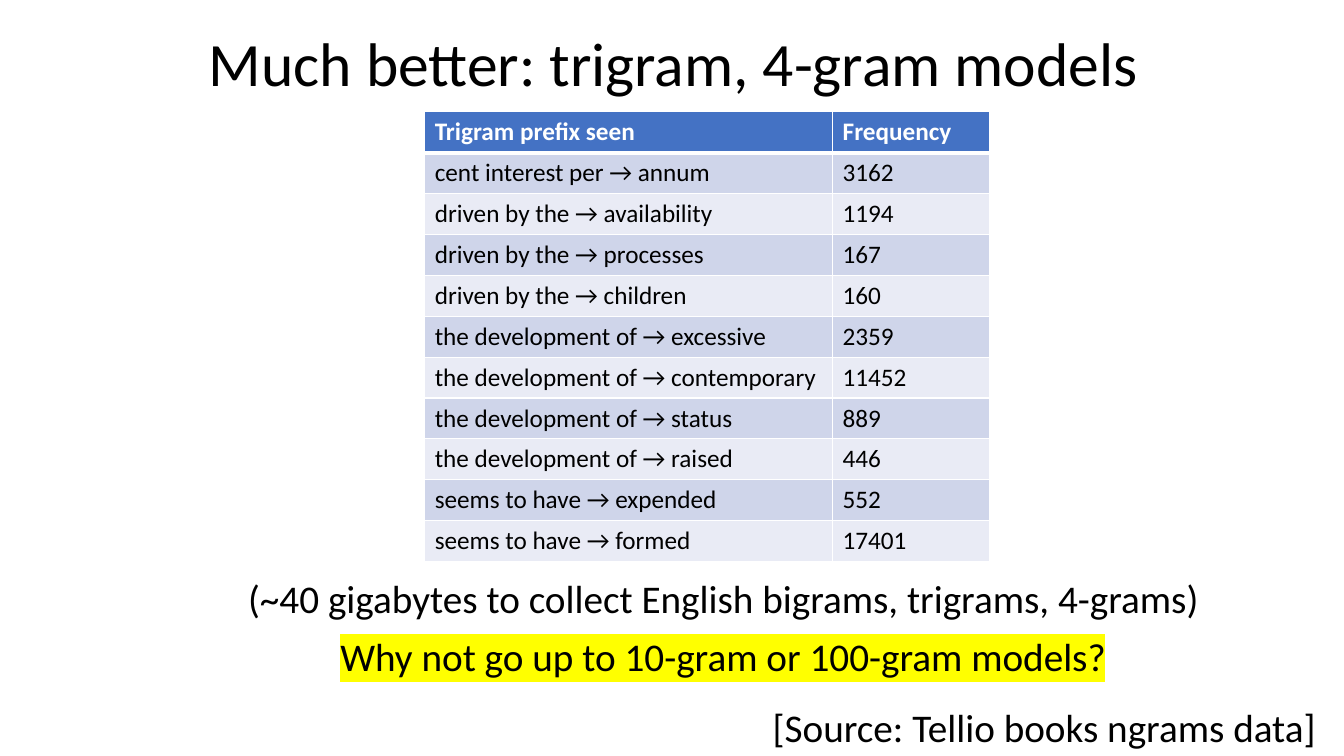
from lxml import etree
from pptx import Presentation
from pptx import util as u
from pptx.dml.color import RGBColor
from pptx.enum import text
from pptx.oxml import ns

WHITE = RGBColor(0xFF, 0xFF, 0xFF)
BLACK = RGBColor(0x00, 0x00, 0x00)
YELLOW = RGBColor(0xFF, 0xFF, 0x00)
HEADER_BLUE = RGBColor(0x44, 0x72, 0xC4)
BANDS = (RGBColor(0xCF, 0xD5, 0xEA), RGBColor(0xE9, 0xEB, 0xF5))

TRIGRAMS = [
    ("Trigram prefix seen", "Frequency"),
    ("cent interest per → annum", "3162"),
    ("driven by the → availability", "1194"),
    ("driven by the → processes", "167"),
    ("driven by the → children", "160"),
    ("the development of → excessive", "2359"),
    ("the development of → contemporary", "11452"),
    ("the development of → status", "889"),
    ("the development of → raised", "446"),
    ("seems to have → expended", "552"),
    ("seems to have → formed", "17401"),
]


class SlideBuilder:
    font_name = "Calibri"

    def __init__(self, slide):
        self.slide = slide

    def format_run(self, run, size, color=BLACK, bold=False):
        run.font.name = self.font_name
        run.font.size = u.Pt(size)
        run.font.bold = bold
        run.font.color.rgb = color

    def highlight(self, run, color):
        marker = etree.Element(ns.qn("a:highlight"))
        etree.SubElement(marker, ns.qn("a:srgbClr"), val=str(color))
        run.font._element.find(ns.qn("a:solidFill")).addnext(marker)

    def text_box(self, content, left, top, width, height, size=28,
                 wrap=False, highlight=None):
        shape = self.slide.shapes.add_textbox(
            u.Pt(left), u.Pt(top), u.Pt(width), u.Pt(height))
        frame = shape.text_frame
        frame.text = content
        frame.word_wrap = wrap
        paragraph = frame.paragraphs[0]
        paragraph.alignment = text.PP_ALIGN.CENTER
        run = paragraph.runs[0]
        self.format_run(run, size)
        if highlight is not None:
            self.highlight(run, highlight)
        return shape

    def title(self, content, left, top, width, height):
        frame = self.text_box(content, left, top, width, height,
                              size=44, wrap=True).text_frame
        frame.vertical_anchor = text.MSO_ANCHOR.MIDDLE
        frame.paragraphs[0].line_spacing = 0.9

    def cell_borders(self, cell, widths):
        """Draw white borders; widths maps each side (L, R, T, B) to points."""
        properties = cell._tc.get_or_add_tcPr()
        for index, (side, width) in enumerate(widths.items()):
            line = etree.Element(ns.qn(f"a:ln{side}"), w=str(u.Pt(width)))
            fill = etree.SubElement(line, ns.qn("a:solidFill"))
            etree.SubElement(fill, ns.qn("a:srgbClr"), val=str(WHITE))
            properties.insert(index, line)

    def table(self, rows, left, top, column_widths, row_height):
        table = self.slide.shapes.add_table(
            len(rows), len(column_widths), u.Pt(left), u.Pt(top),
            u.Pt(sum(column_widths)), u.Pt(row_height * len(rows))).table
        for column, width in zip(table.columns, column_widths):
            column.width = u.Pt(width)
        for row_index, values in enumerate(rows):
            table.rows[row_index].height = u.Pt(row_height)
            header = row_index == 0
            for column_index, value in enumerate(values):
                cell = table.cell(row_index, column_index)
                cell.text_frame.text = value
                self.format_run(cell.text_frame.paragraphs[0].runs[0], 18,
                                WHITE if header else BLACK, bold=header)
                cell.fill.solid()
                cell.fill.fore_color.rgb = (
                    HEADER_BLUE if header else BANDS[(row_index - 1) % 2])
                self.cell_borders(cell, {
                    "L": 1, "R": 1,
                    "T": 3 if row_index == 1 else 1,
                    "B": 3 if header else 1})


def main():
    presentation = Presentation()
    presentation.slide_width = u.Pt(960)
    presentation.slide_height = u.Pt(540)
    builder = SlideBuilder(
        presentation.slides.add_slide(presentation.slide_layouts[6]))

    builder.title("Much better: trigram, 4-gram models", 1.4, 1.8, 960, 91.4)
    builder.table(TRIGRAMS, 303.4, 79.9, (291.4, 112), 29.2)
    builder.text_box("[Source: Tellio books ngrams data]",
                     531.6, 499, 428.4, 41)
    builder.text_box(
        "(~40 gigabytes to collect English bigrams, trigrams, 4-grams)",
        166.3, 407, 700.6, 41.2)
    builder.text_box("Why not go up to 10-gram or 100-gram models?",
                     232.4, 448.3, 568, 41.2, highlight=YELLOW)
    presentation.save("out.pptx")


if __name__ == "__main__":
    main()
